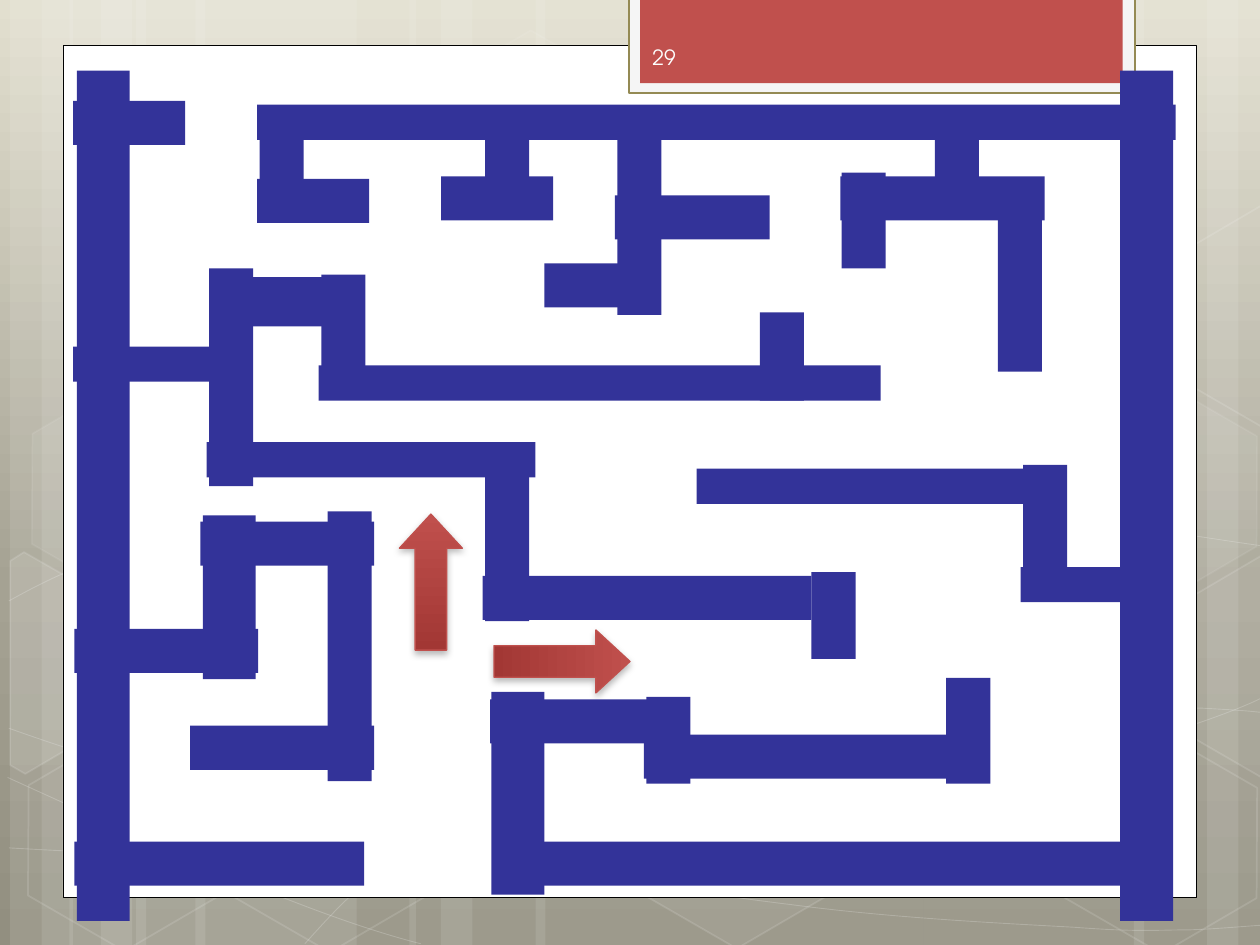
from math import cos, radians, sin

from lxml.etree import SubElement
from pptx import Presentation
from pptx.dml.color import RGBColor
from pptx.enum.shapes import MSO_SHAPE as Shape
from pptx.enum.text import MSO_ANCHOR as Anchor, PP_ALIGN as Align
from pptx.oxml.ns import qn
from pptx.util import Inches, Pt

FONT = "TeX Gyre Adventor"
WHITE, WALL, RED, DARK_RED = "FFFFFF", "333399", "C0504D", "A23734"
BACKDROP = [(0, "E2DFCF"), (62, "A5A293"), (100, "928F80")]
ARROW_SHADES = [(0, RED), (100, DARK_RED)]
PAGE_NUMBER = "29"
TILT = 30

# left, width
STRIPES = [
    (1.08, 1.75), (0.08, 0.5), (0.33, 0.83), (1.55, 1.75), (0.55, 0.5), (0.8, 0.83),
    (7.33, 1.75), (9.58, 0.5), (9, 0.83), (4.25, 3.08), (3.25, 0.5), (3.5, 0.83),
]
# start point, then two control points and an end point per bend
CURVES = [
    [(0.07, 6.73), (0.61, 6.76), (1.15, 6.79), (1.9, 6.78), (2.65, 6.77), (3.58, 6.75),
     (4.58, 6.65), (5.58, 6.55), (7, 6.36), (7.92, 6.17), (8.83, 5.98), (9.77, 5.68),
     (10.07, 5.51)],
    [(0.07, 4.77), (0.36, 4.61), (0.65, 4.46), (1.21, 4.31), (1.78, 4.16), (2.59, 3.94),
     (3.47, 3.87), (4.36, 3.8), (5.44, 3.79), (6.54, 3.87), (7.64, 3.95), (9.47, 4.26),
     (10.07, 4.34)],
    [(0.06, 6.17), (1.27, 6.72), (2.47, 7.27), (3.34, 7.49)],
    [(0.07, 5.78), (0.38, 5.89), (0.7, 6), (1.28, 6.16), (1.86, 6.31), (2.73, 6.56),
     (3.57, 6.73), (4.4, 6.9), (5.45, 7.08), (6.28, 7.18), (7.11, 7.29), (8, 7.33),
     (8.53, 7.36), (9.05, 7.4), (9.19, 7.38), (9.45, 7.38), (9.71, 7.37), (9.89, 7.35),
     (10.07, 7.34)],
    [(2.42, 7.49), (2.6, 7.29), (2.78, 7.09), (3.02, 6.91), (3.26, 6.73), (3.6, 6.53),
     (3.88, 6.39), (4.16, 6.25), (4.33, 6.19), (4.7, 6.09), (5.06, 5.99), (5.73, 5.85),
     (6.08, 5.78), (6.44, 5.71), (6.49, 5.71), (6.8, 5.69), (7.11, 5.66), (7.6, 5.63),
     (7.94, 5.62), (8.29, 5.61), (8.86, 5.62), (8.86, 5.62), (8.86, 5.62), (9.53, 5.62),
     (9.53, 5.62), (9.71, 5.63), (9.88, 5.64), (9.97, 5.65), (10.06, 5.66), (10.03, 5.65),
     (10.06, 5.66)],
]
# left, top, fill opacity, line opacity
HEXAGONS = [
    (3.34, 0.36, 4, 8), (4.97, 5.89, 6, 12), (0.11, 5.91, 0, 12), (0.14, 3.12, 7, 8),
    (1.74, 5.92, 0, 12), (7.53, 4.53, 10, 12), (8.34, 5.93, 0, 12), (8.34, 3.14, 7, 8),
]
# centre, corners, fill opacity
CUT_HEXAGONS = [
    ((0.36, 5.35), [(0.08, 4.45), (0.19, 4.38), (0.96, 4.82), (0.95, 5.7), (0.2, 6.14),
                    (0.08, 6.07)], 10),
    ((9.85, 5.2), [(9.26, 4.85), (10.01, 4.41), (10.09, 4.46), (10.09, 6.13),
                   (10.02, 6.17), (9.26, 5.73)], 4),
    ((9.85, 2.41), [(9.26, 2.07), (10.01, 1.63), (10.1, 1.68), (10.09, 3.35),
                    (10.02, 3.39), (9.26, 2.95)], 0),
]
# box, fill, line, line width
PANELS = [
    ((0.5, 0.36, 9, 6.76), WHITE, "000000", 0.5),
    ((4.99, -0.02, 4.02, 0.76), "F5F5F5", "948A54", 1.25),
    ((5.08, -0.02, 3.83, 0.68), RED, None, 0),
]
# left, top, rotation
ARROWS = [(3.17, 4.08, 0), (4.21, 4.71, 90)]
# thickness: (left, top, length)
ACROSS = {
    0.28: [(2.53, 2.9, 4.46), (5.53, 3.72, 2.76), (2.04, 0.83, 7.29), (0.58, 2.75, 1.38),
           (1.64, 3.51, 2.61), (8.1, 4.5, 1.15)],
    0.35: [(0.59, 6.68, 2.3), (3.83, 4.57, 2.61), (0.59, 4.99, 1.46), (1.59, 4.14, 1.38),
           (6.67, 1.4, 1.62), (1.51, 5.76, 1.46), (3.89, 5.55, 1.53), (4.12, 6.68, 5.14),
           (4.32, 2.09, 0.89), (5.11, 5.83, 2.61), (4.88, 1.55, 1.23), (3.5, 1.4, 0.89),
           (2.04, 1.42, 0.89), (0.58, 0.8, 0.89)],
    0.39: [(1.74, 2.2, 1.12)],
}
DOWN = {
    0.35: [(6.44, 4.54, 0.69), (7.51, 5.38, 0.84), (6.68, 1.37, 0.76), (2.55, 2.18, 0.97),
           (1.66, 2.13, 1.73), (3.85, 3.67, 1.26), (2.6, 4.06, 2.14), (2.06, 0.92, 0.69),
           (7.42, 0.92, 0.65), (7.92, 1.56, 1.39), (5.13, 5.53, 0.69), (8.12, 3.69, 0.99),
           (6.03, 2.48, 0.7), (4.9, 0.96, 1.54), (3.85, 1.06, 0.65)],
    0.42: [(8.89, 0.56, 6.75), (0.61, 0.56, 6.75), (1.61, 4.09, 1.3), (3.9, 5.49, 1.61)],
}


def color(value):
    return RGBColor.from_string(value)


def fade(parent, opacity):
    tint = parent.find(qn("a:solidFill")).find(qn("a:srgbClr"))
    SubElement(tint, qn("a:alpha"), val=str(opacity * 1000))


def shade(fill, owner, stops):
    fill.gradient()
    fill.gradient_angle = 270
    stop_list = next(owner.iter(qn("a:gsLst")))
    for stop in list(stop_list):
        stop_list.remove(stop)
    for position, tint in stops:
        stop = SubElement(stop_list, qn("a:gs"), pos=str(position * 1000))
        SubElement(stop, qn("a:srgbClr"), val=tint)


def paint(shape, fill=None, line=None, width=0, opacity=100, line_opacity=100):
    shape.shadow.inherit = False
    properties = shape._element.spPr
    if fill and opacity:
        shape.fill.solid()
        shape.fill.fore_color.rgb = color(fill)
        if opacity < 100:
            fade(properties, opacity)
    else:
        shape.fill.background()
    if line:
        shape.line.color.rgb = color(line)
        shape.line.width = Pt(width)
        if line_opacity < 100:
            fade(properties.find(qn("a:ln")), line_opacity)
    else:
        shape.line.fill.background()
    return shape


def place(slide, kind, box, **look):
    return paint(slide.shapes.add_shape(kind, *map(Inches, box)), **look)


def trace(slide, points, close, **look):
    corners = [(Inches(x), Inches(y)) for x, y in points]
    builder = slide.shapes.build_freeform(*corners[0])
    builder.add_line_segments(corners[1:], close=close)
    return paint(builder.convert_to_shape(), **look)


def add_curve(slide, points):
    curve = trace(slide, points[::3], False, line=WHITE, width=0.5, line_opacity=20)
    segments = list(curve._element.iter(qn("a:lnTo")))
    for index, segment in enumerate(segments):
        segment.tag = qn("a:cubicBezTo")
        for place_in_bend, (x, y) in enumerate(points[3 * index + 1:3 * index + 3]):
            control = SubElement(segment, qn("a:pt"), x=str(Inches(x) - curve.left),
                                 y=str(Inches(y) - curve.top))
            segment.insert(place_in_bend, control)


def level(point, centre):
    dx, dy = point[0] - centre[0], point[1] - centre[1]
    c, s = cos(radians(TILT)), sin(radians(TILT))
    return centre[0] + dx * c + dy * s, centre[1] - dx * s + dy * c


def add_backdrop(slide):
    shade(slide.background.fill, slide._element, BACKDROP)
    for left, width in STRIPES:
        place(slide, Shape.RECTANGLE, (left, 0, width, 7.5), fill=WHITE, opacity=10)
    for points in CURVES:
        add_curve(slide, points)
    for left, top, opacity, line_opacity in HEXAGONS:
        hexagon = place(slide, Shape.HEXAGON, (left, top, 1.75, 1.52), fill=WHITE, line=WHITE,
                        width=1, opacity=opacity, line_opacity=line_opacity)
        hexagon.adjustments[0] = 0.285
        hexagon.rotation = TILT
    for centre, corners, opacity in CUT_HEXAGONS:
        trace(slide, [level(corner, centre) for corner in corners], True, fill=WHITE,
              line=WHITE, width=1, opacity=opacity, line_opacity=12).rotation = TILT
    for box, fill, line, width in PANELS:
        place(slide, Shape.RECTANGLE, box, fill=fill, line=line, width=width)


def add_page_number(slide):
    frame = slide.shapes.add_textbox(*map(Inches, (5.08, 0.25, 1.46, 0.4))).text_frame
    frame.word_wrap = True
    frame.vertical_anchor = Anchor.MIDDLE
    frame.text = PAGE_NUMBER
    frame.paragraphs[0].alignment = Align.LEFT
    font = frame.paragraphs[0].runs[0].font
    font.name, font.size, font.color.rgb = FONT, Pt(12), color("FEFEFE")


def add_arrow(slide, left, top, rotation):
    arrow = place(slide, Shape.UP_ARROW, (left, top, 0.5, 1.08), line=RED, width=0.75)
    arrow.adjustments[0], arrow.adjustments[1] = 0.5, 0.542
    arrow.rotation = rotation
    properties = arrow._element.spPr
    shade(arrow.fill, properties, ARROW_SHADES)
    shadow = SubElement(properties.find(qn("a:effectLst")), qn("a:outerShdw"),
                        blurRad=str(Pt(4)), dist=str(Pt(2)), dir="5400000", rotWithShape="0")
    tint = SubElement(shadow, qn("a:srgbClr"), val="000000")
    SubElement(tint, qn("a:alpha"), val="28000")


def main():
    """Build the maze slide with its two direction arrows."""
    deck = Presentation()
    deck.slide_width, deck.slide_height = Inches(10), Inches(7.5)
    slide = deck.slides.add_slide(deck.slide_layouts[6])
    add_backdrop(slide)
    add_page_number(slide)
    for arrow in ARROWS:
        add_arrow(slide, *arrow)
    walls = [(x, y, length, thick) for thick, row in ACROSS.items() for x, y, length in row]
    walls += [(x, y, thick, length) for thick, row in DOWN.items() for x, y, length in row]
    for wall in walls:
        place(slide, Shape.RECTANGLE, wall, fill=WALL)
    deck.save("out.pptx")


if __name__ == "__main__":
    main()
